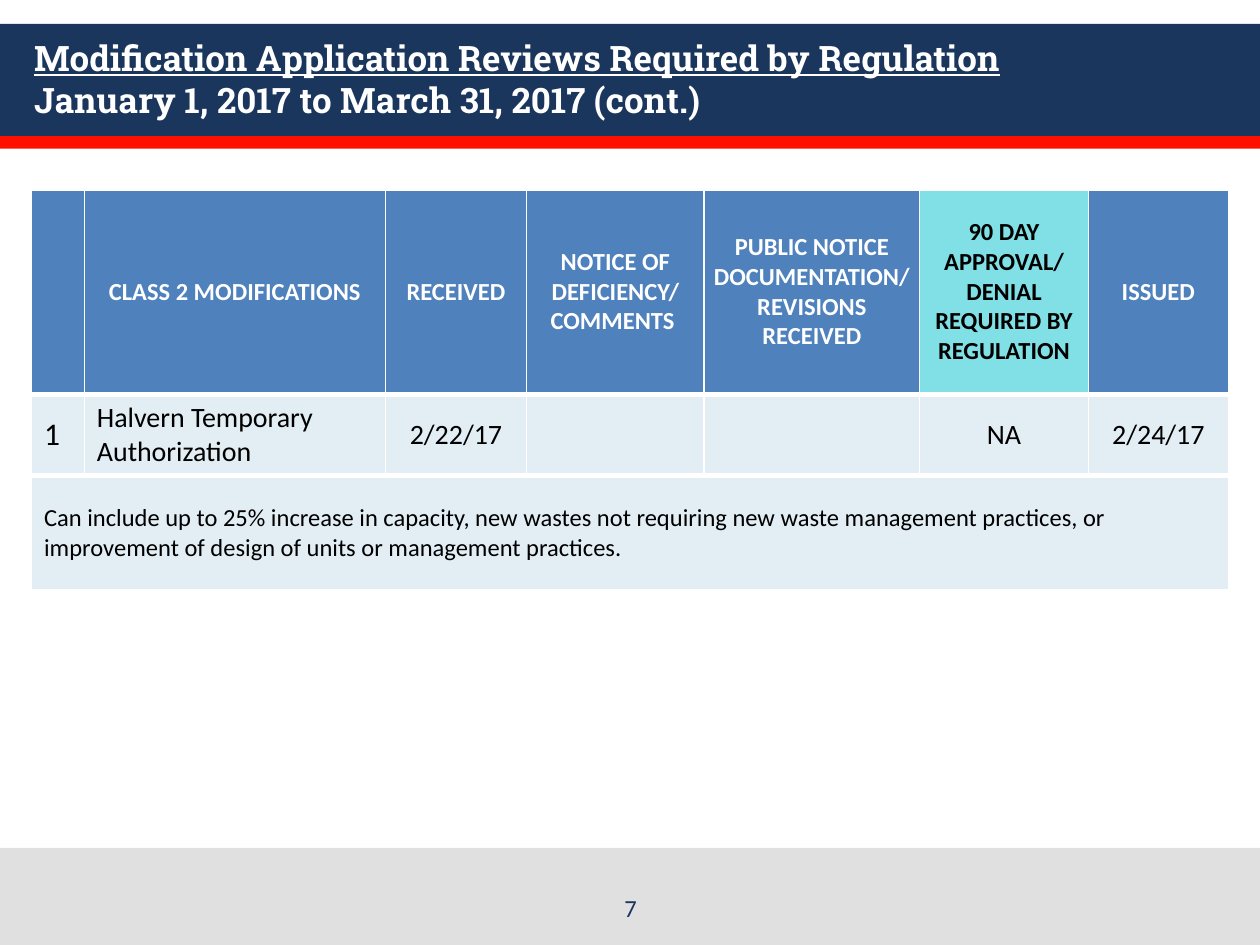
from dataclasses import dataclass

from lxml.etree import SubElement
from pptx import Presentation
from pptx.dml.color import RGBColor
from pptx.enum.shapes import MSO_SHAPE
from pptx.enum.text import MSO_ANCHOR, PP_ALIGN
from pptx.oxml.ns import qn
from pptx.util import Inches, Pt


@dataclass(frozen=True)
class Theme:
    navy: str = "1B365D"
    red: str = "FF0F00"
    footer: str = "E0E0E0"
    header: str = "4F81BD"
    deadline: str = "81E0E5"
    body: str = "E2EDF4"
    white: str = "FFFFFF"
    black: str = "000000"
    title_font: str = "Roboto Slab"
    body_font: str = "Calibri"
    title_size: int = 20
    small_size: int = 14
    entry_size: int = 16
    number_size: int = 18


THEME = Theme()
WIDTH, HEIGHT = 10, 7.5
TITLE = ("Modification Application Reviews Required by Regulation",
         "January 1, 2017 to March 31, 2017 (cont.)")
PAGE_NUMBER = "7"
BANDS = [  # top, height, colour
    (0.19, 0.89, THEME.navy),
    (1.08, 0.1, THEME.red),
    (6.73, 0.77, THEME.footer),
]
HEADINGS = ["", "CLASS 2 MODIFICATIONS", "RECEIVED", "NOTICE OF DEFICIENCY/ COMMENTS ",
            "PUBLIC NOTICE DOCUMENTATION/REVISIONS RECEIVED",
            "90 DAY APPROVAL/ DENIAL\nREQUIRED BY REGULATION", "ISSUED"]
ENTRY = ["1", "Halvern Temporary Authorization", "2/22/17", "", "", "NA", "2/24/17"]
NOTE = ("Can include up to 25% increase in capacity, new wastes not requiring "
        "new waste management practices, or\n"
        "improvement of design of units or management practices.")
DEADLINE_COLUMN = 5
COLUMN_WIDTHS = [0.42, 2.39, 1.12, 1.41, 1.71, 1.34, 1.11]
ROW_HEIGHTS = [1.63, 0.62, 0.92]
TABLE_LEFT, TABLE_TOP = 0.25, 1.5


def colour(value):
    return RGBColor.from_string(value)


def style(paragraph, size, ink, font=THEME.body_font, bold=False, align=PP_ALIGN.LEFT):
    paragraph.alignment = align
    paragraph.font.name = font
    paragraph.font.size = Pt(size)
    paragraph.font.bold = bold
    paragraph.font.color.rgb = colour(ink)


def add_borders(cell):
    """White rules: thin between columns, thick between rows."""
    properties = cell._tc.get_or_add_tcPr()
    for position, (side, width) in enumerate(
            [("lnL", 1), ("lnR", 1), ("lnT", 3), ("lnB", 3)]):
        line = SubElement(properties, qn(f"a:{side}"), w=str(Pt(width)))
        fill = SubElement(line, qn("a:solidFill"))
        SubElement(fill, qn("a:srgbClr"), val=THEME.white)
        properties.insert(position, line)


def fill_cell(cell, text, fill, size, ink=THEME.black, bold=False,
              align=PP_ALIGN.LEFT, margins=(0.1, 0.05)):
    cell.fill.solid()
    cell.fill.fore_color.rgb = colour(fill)
    cell.vertical_anchor = MSO_ANCHOR.MIDDLE
    cell.margin_left = cell.margin_right = Inches(margins[0])
    cell.margin_top = cell.margin_bottom = Inches(margins[1])
    cell.text = text
    for paragraph in cell.text_frame.paragraphs:
        style(paragraph, size, ink, bold=bold, align=align)
    add_borders(cell)


def add_bands(page):
    for top, height, fill in BANDS:
        band = page.shapes.add_shape(MSO_SHAPE.RECTANGLE, 0, Inches(top),
                                     Inches(WIDTH), Inches(height))
        band.shadow.inherit = False
        band.fill.solid()
        band.fill.fore_color.rgb = colour(fill)
        band.line.fill.background()


def add_title(page):
    title = page.shapes.title
    page.shapes._spTree.append(title._element)  # in front of the bands
    title.left, title.top = Inches(0.17), Inches(0.17)
    title.width, title.height = Inches(9.67), Inches(0.9)
    title.text_frame.vertical_anchor = MSO_ANCHOR.MIDDLE
    paragraph = title.text_frame.paragraphs[0]
    style(paragraph, THEME.title_size, THEME.white, THEME.title_font, bold=True)
    heading = paragraph.add_run()
    heading.text = TITLE[0]
    heading.font.underline = True
    paragraph.add_line_break()
    paragraph.add_run().text = TITLE[1]


def add_review_table(page):
    table = page.shapes.add_table(
        len(ROW_HEIGHTS), len(COLUMN_WIDTHS), Inches(TABLE_LEFT), Inches(TABLE_TOP),
        Inches(sum(COLUMN_WIDTHS)), Inches(sum(ROW_HEIGHTS))).table
    for column, width in zip(table.columns, COLUMN_WIDTHS):
        column.width = Inches(width)
    for row, height in zip(table.rows, ROW_HEIGHTS):
        row.height = Inches(height)

    for index, (heading, entry) in enumerate(zip(HEADINGS, ENTRY)):
        is_deadline = index == DEADLINE_COLUMN
        fill_cell(table.cell(0, index), heading,
                  THEME.deadline if is_deadline else THEME.header, THEME.small_size,
                  THEME.black if is_deadline else THEME.white, bold=True,
                  align=PP_ALIGN.CENTER, margins=(0.07, 0))
        fill_cell(table.cell(1, index), entry, THEME.body,
                  THEME.number_size if index == 0 else THEME.entry_size,
                  align=PP_ALIGN.LEFT if index < 2 else PP_ALIGN.CENTER)

    note = table.cell(2, 0)
    note.merge(table.cell(2, len(COLUMN_WIDTHS) - 1))
    fill_cell(note, NOTE, THEME.body, THEME.small_size)


def add_page_number(page):
    box = page.shapes.add_textbox(Inches(3.42), Inches(6.97), Inches(3.17), Inches(0.4))
    box.text_frame.word_wrap = True
    box.text_frame.vertical_anchor = MSO_ANCHOR.BOTTOM
    box.text_frame.text = PAGE_NUMBER
    style(box.text_frame.paragraphs[0], THEME.small_size, THEME.navy,
          align=PP_ALIGN.CENTER)


def main():
    deck = Presentation()
    deck.slide_width, deck.slide_height = Inches(WIDTH), Inches(HEIGHT)
    page = deck.slides.add_slide(deck.slide_layouts[5])
    add_bands(page)
    add_title(page)
    add_review_table(page)
    add_page_number(page)
    deck.save("out.pptx")


if __name__ == "__main__":
    main()
